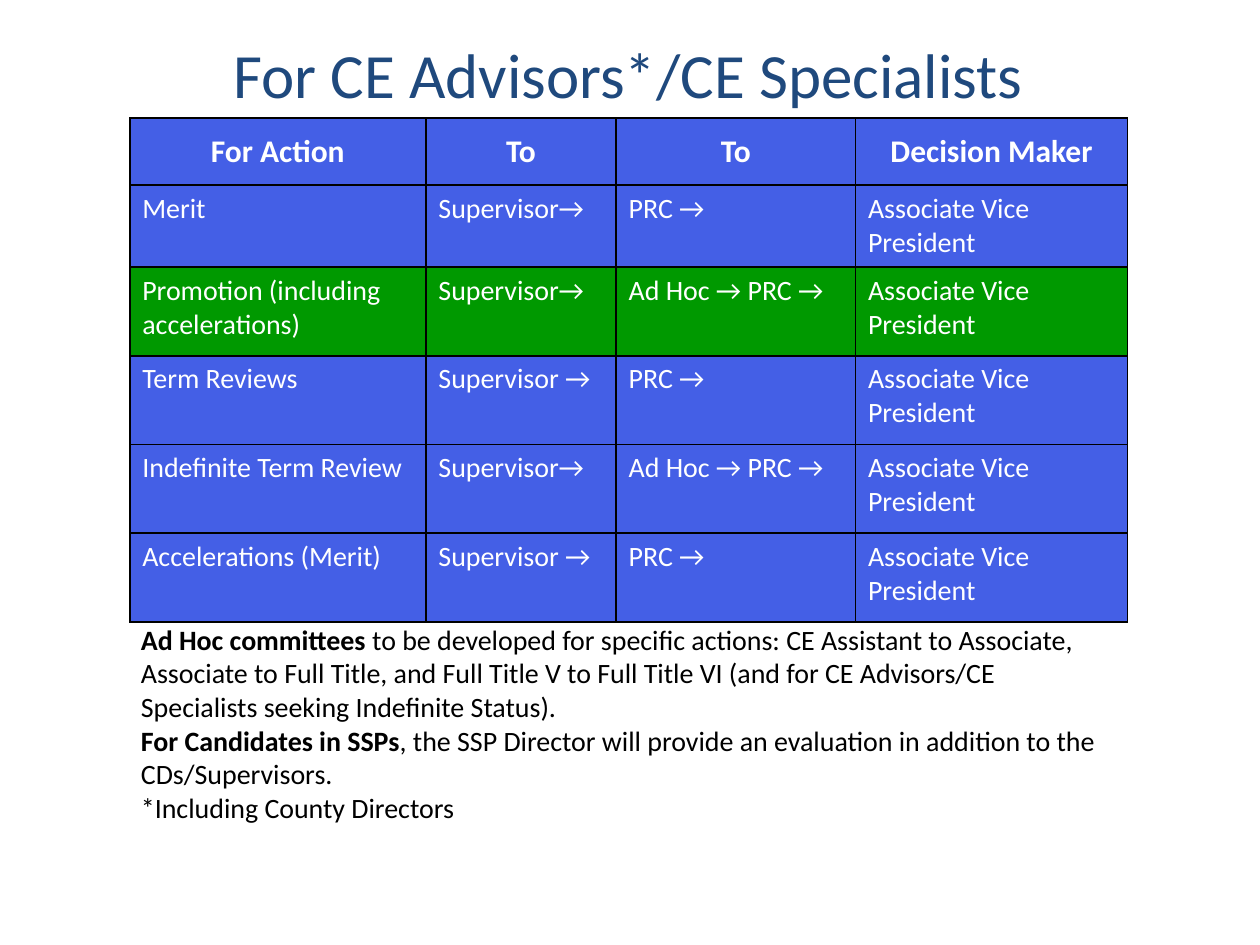
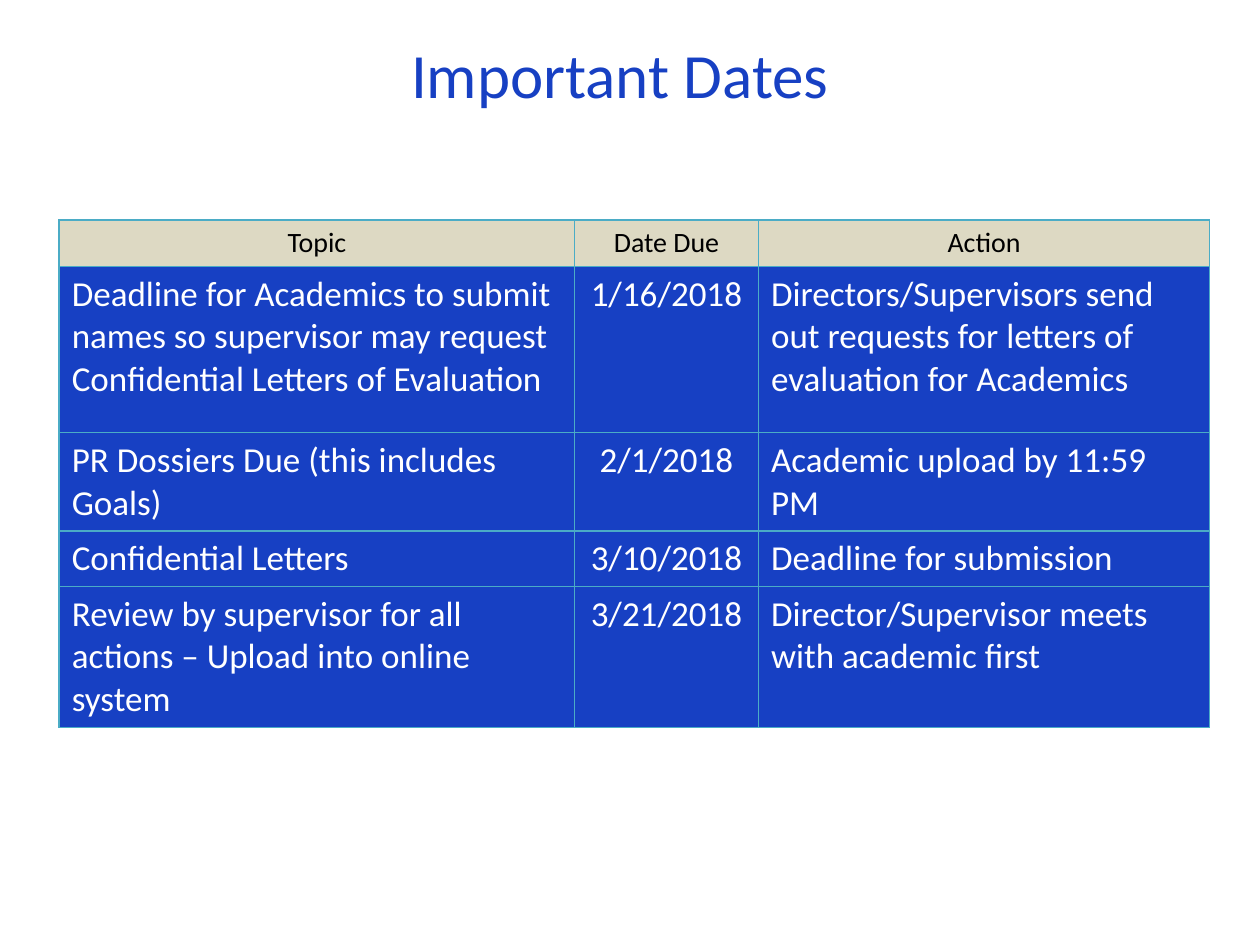
from dataclasses import dataclass

from lxml.etree import SubElement
from pptx import Presentation
from pptx.dml.color import RGBColor
from pptx.enum.text import MSO_ANCHOR as ANCHOR, PP_ALIGN as ALIGN
from pptx.oxml.ns import qn
from pptx.util import Inches, Pt


@dataclass(frozen=True)
class Theme:
    font: str = "Calibri"
    black: str = "000000"
    white: str = "FFFFFF"
    navy: str = "1F497D"
    royal: str = "1740C3"
    blue: str = "445FE6"
    green: str = "009900"
    tan: str = "DDD9C3"
    aqua: str = "4BACC6"
    title_size: float = 36
    large_size: float = 20
    header_size: float = 18
    body_size: float = 16
    border_width: float = 1


@dataclass(frozen=True)
class CellStyle:
    fill: str
    color: str
    size: float
    bold: bool = False
    anchor: ANCHOR = ANCHOR.TOP


T = Theme()
WIDTH, HEIGHT = Inches(10), Inches(7.5)
COLS, ROWS = 100, 75

PROCESS_HEADER = CellStyle(T.blue, T.white, T.header_size, True, ANCHOR.MIDDLE)
PROCESS_ROW = CellStyle(T.blue, T.white, T.body_size)
PROMOTION_ROW = CellStyle(T.green, T.white, T.body_size)
DATES_HEADER = CellStyle(T.tan, T.black, T.body_size)
DATES_ROW = CellStyle(T.royal, T.white, T.large_size)

DECIDER = "Associate Vice President"
PROCESS = [
    ("For Action", "To", "To", "Decision Maker"),
    ("Merit", "Supervisor→", "PRC →", DECIDER),
    ("Promotion (including accelerations)", "Supervisor→", "Ad Hoc → PRC →", DECIDER),
    ("Term Reviews", "Supervisor →", "PRC →", DECIDER),
    ("Indefinite Term Review", "Supervisor→", "Ad Hoc → PRC →", DECIDER),
    ("Accelerations (Merit)", "Supervisor →", "PRC →", DECIDER),
]
DATES = [
    ("Topic", "Date Due", "Action"),
    ("Deadline for Academics to submit names so supervisor may request "
     "Confidential Letters of Evaluation", "1/16/2018",
     "Directors/Supervisors send out requests for letters of evaluation for Academics"),
    ("PR Dossiers Due (this includes Goals)", "2/1/2018", "Academic upload by 11:59 PM"),
    ("Confidential Letters", "3/10/2018", "Deadline for submission"),
    ("Review by supervisor for all actions – Upload into online system", "3/21/2018",
     "Director/Supervisor meets with academic first"),
]
# Each note is a bold lead followed by plain text.
NOTES = [
    ("Ad Hoc committees", " to be developed for specific actions: CE Assistant to Associate, "
     "Associate to Full Title, and Full Title V to Full Title VI (and for CE Advisors/CE "
     "Specialists seeking Indefinite Status)."),
    ("For Candidates in SSPs", ", the SSP Director will provide an evaluation in addition "
     "to the CDs/Supervisors."),
    ("", "*Including County Directors"),
]


def across(cols):
    return round(WIDTH * cols / COLS)


def down(rows):
    return round(HEIGHT * rows / ROWS)


def add_run(p, text, size, color, bold=False):
    r = p.add_run()
    r.text = text
    r.font.name = T.font
    r.font.size = Pt(size)
    r.font.bold = bold
    r.font.color.rgb = RGBColor.from_string(color)


def add_box(s, left, top, width, height):
    """Add a wrapping, vertically centred text box and return its text frame."""
    box = s.shapes.add_textbox(across(left), down(top), across(width), down(height))
    tf = box.text_frame
    tf.word_wrap = True
    tf.vertical_anchor = ANCHOR.MIDDLE
    return tf


def add_title(s, text, color, left, width):
    p = add_box(s, left, 3.3, width, 5).paragraphs[0]
    p.alignment = ALIGN.CENTER
    add_run(p, text, T.title_size, color)


def add_notes(s, notes, left, top, width, height):
    tf = add_box(s, left, top, width, height)
    for i, (lead, rest) in enumerate(notes):
        p = tf.add_paragraph() if i else tf.paragraphs[0]
        if lead:
            add_run(p, lead, T.body_size, T.black, bold=True)
        add_run(p, rest, T.body_size, T.black)


def set_borders(cell, color):
    tc_pr = cell._tc.get_or_add_tcPr()
    for side in ("a:lnL", "a:lnR", "a:lnT", "a:lnB"):
        line = SubElement(tc_pr, qn(side), w=str(Pt(T.border_width)))
        SubElement(SubElement(line, qn("a:solidFill")), qn("a:srgbClr"), val=color)


def fill_cell(cell, text, style, border, centred):
    set_borders(cell, border)
    cell.fill.solid()
    cell.fill.fore_color.rgb = RGBColor.from_string(style.fill)
    cell.vertical_anchor = style.anchor
    p = cell.text_frame.paragraphs[0]
    p.alignment = ALIGN.CENTER if centred else ALIGN.LEFT
    add_run(p, text, style.size, style.color, style.bold)


def add_grid(s, data, left, top, widths, heights, styles, border, centred_cols=()):
    """Add a table with one style per row; the header row is always centred."""
    frame = s.shapes.add_table(len(data), len(widths), across(left), down(top),
                               across(sum(widths)), down(sum(heights)))
    table = frame.table
    table.first_row = table.horz_banding = False
    for col, width in zip(table.columns, widths):
        col.width = across(width)
    for row, height in zip(table.rows, heights):
        row.height = down(height)
    for i, (texts, style) in enumerate(zip(data, styles)):
        for j, text in enumerate(texts):
            fill_cell(table.cell(i, j), text, style, border, i == 0 or j in centred_cols)


def add_process_slide(s):
    add_notes(s, NOTES, 10.2, 49.1, 79.2, 16.6)
    add_title(s, "For CE Advisors*/CE Specialists", T.navy, 10.2, 79.3)
    styles = [PROCESS_HEADER, PROCESS_ROW, PROMOTION_ROW] + [PROCESS_ROW] * 3
    add_grid(s, PROCESS, 10.3, 9.35, [23.5, 15.1, 19, 21.6],
             [5.35, 6.5] + [7.04] * 4, styles, T.black)


def add_dates_slide(s):
    add_title(s, "Important Dates", T.royal, 6.7, 85)
    styles = [DATES_HEADER] + [DATES_ROW] * 4
    add_grid(s, DATES, 4.7, 17.45, [40.9, 14.6, 35.8],
             [3.7, 13.2, 7.8, 4.4, 11.2], styles, T.aqua, centred_cols=(1,))


def main():
    prs = Presentation()
    prs.slide_width, prs.slide_height = WIDTH, HEIGHT
    blank = prs.slide_layouts[6]
    for build in (add_process_slide, add_dates_slide):
        build(prs.slides.add_slide(blank))
    prs.save("out.pptx")


if __name__ == "__main__":
    main()
